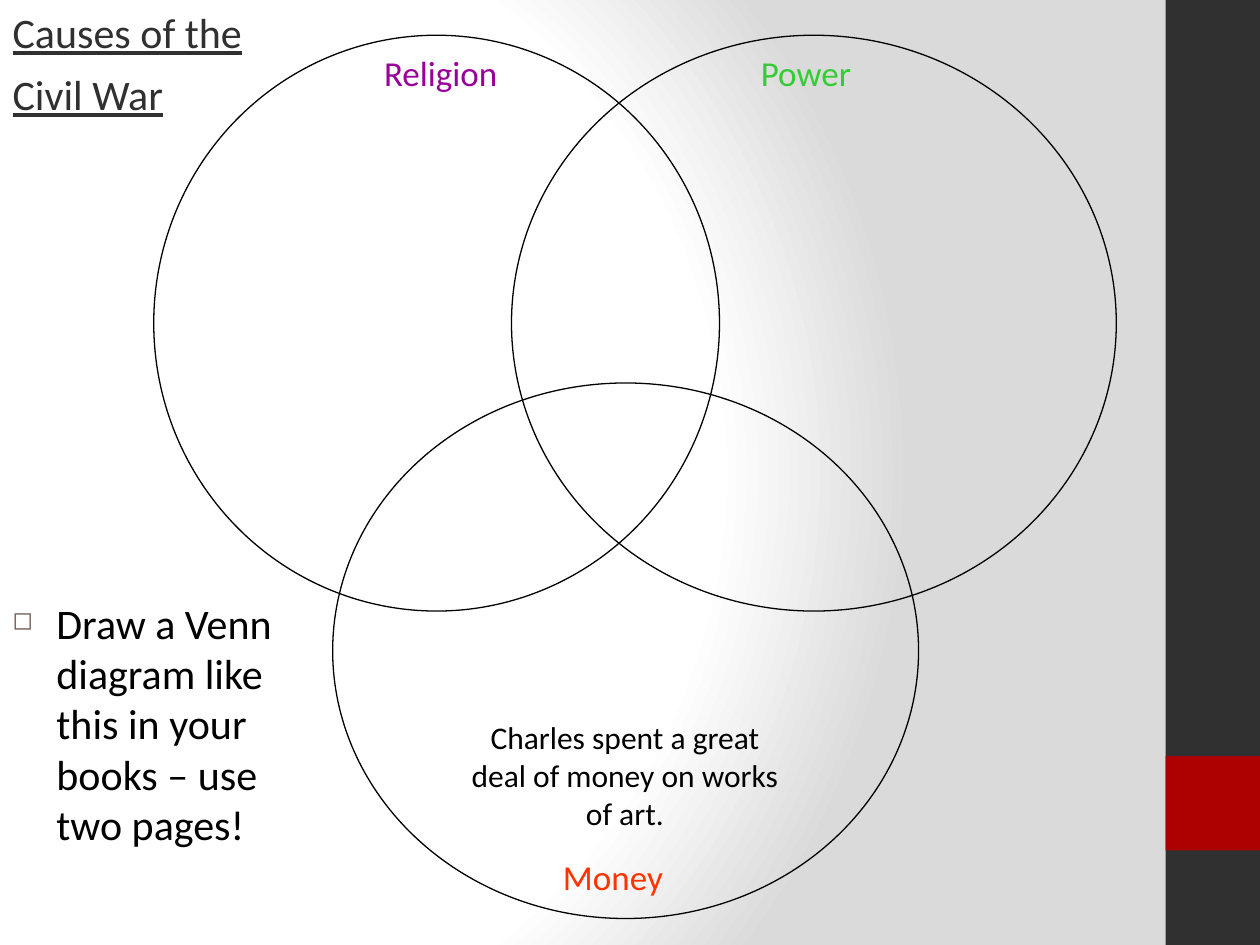
import pptx
import pptx.dml.color
import pptx.enum.shapes
import pptx.enum.text
import pptx.oxml.ns
import pptx.util
import lxml.etree

theme = {
    "font": "Calibri", "big": 24, "mid": 20, "small": 18,
    "ink": "000000", "dark": "303030", "red": "AD0101", "mark": "726056",
    "faith": "990099", "power": "33CC33", "money": "FF3300",
    "stops": [(0, "FFFFFF"), (75, "FFFFFF"), (100, "DADADA")],
}
kinds = pptx.enum.shapes.MSO_SHAPE
aligns = pptx.enum.text.PP_ALIGN
color = pptx.dml.color.RGBColor.from_string

deck = pptx.Presentation()
deck.slide_width = pptx.util.Inches(10)
deck.slide_height = pptx.util.Inches(7.5)
col, row = deck.slide_width / 100, deck.slide_height / 100
slide = deck.slides.add_slide(deck.slide_layouts[5])
shapes = slide.shapes


def add(node, tag, **attrs):
    """Append a drawing element with the given attributes."""
    name = pptx.oxml.ns.qn("a:" + tag)
    return lxml.etree.SubElement(node, name, {k: str(v) for k, v in attrs.items()})


def write(text, at, size, ink, box=None, hang=True, line=False, mark=None):
    """Put text in a box placed by percent of the slide."""
    box = box or shapes.add_textbox(0, 0, 0, 0)
    x, y, w, h = at
    box.left, box.top = round(x * col), round(y * row)
    box.width, box.height = round(w * col), round(h * row)
    frame = box.text_frame
    frame.word_wrap = True
    frame.auto_size = pptx.enum.text.MSO_AUTO_SIZE.NONE
    frame.vertical_anchor = pptx.enum.text.MSO_ANCHOR.TOP
    frame.text = text
    for para in frame.paragraphs:
        para.alignment = aligns.LEFT if hang else aligns.CENTER
        font = para.runs[0].font
        font.name, font.size = theme["font"], pptx.util.Pt(size)
        font.color.rgb = color(ink)
        font.underline = line
        if hang:
            para.space_before = pptx.util.Pt(7)
            props = para._p.get_or_add_pPr()
            indent = pptx.util.Inches(0.35)
            props.set("marL", str(indent))
            props.set("indent", str(-indent))
            if mark:
                add(add(props, "buClr"), "srgbClr", val=theme["mark"])
                add(props, "buSzPct", val=60000)
                add(props, "buChar", char=mark)


# Background: a glow from the left side
slide.background.fill.gradient()
grad = slide._element.find(".//" + pptx.oxml.ns.qn("a:gradFill"))
for child in list(grad):
    grad.remove(child)
stops = add(grad, "gsLst")
for pos, tone in theme["stops"]:
    add(add(stops, "gs", pos=pos * 1000), "srgbClr", val=tone)
glow = add(grad, "path", path="circle")
add(glow, "fillToRect", l=20000, t=50000, r=100000, b=50000)

# Side band with its red block, then the three rings
for kind, fill, x, y, w, h in [
    (kinds.RECTANGLE, theme["dark"], 92.5, 0, 7.5, 100),
    (kinds.RECTANGLE, theme["red"], 92.5, 80, 7.5, 10),
    (kinds.OVAL, None, 12.2, 3.73, 44.9, 60.93),
    (kinds.OVAL, None, 40.6, 3.73, 48, 60.93),
    (kinds.OVAL, None, 26.4, 40.53, 46.5, 56.67),
]:
    shape = shapes.add_shape(kind, round(x * col), round(y * row),
                             round(w * col), round(h * row))
    shape.shadow.inherit = False
    if fill:
        shape.fill.solid()
        shape.fill.fore_color.rgb = color(fill)
        shape.line.fill.background()
    else:
        shape.fill.background()
        shape.line.color.rgb = color(theme["ink"])
        shape.line.width = pptx.util.Pt(0.75)

# Words
write("Causes of the\nCivil War", (0, 0, 26.4, 26.27), theme["big"],
      theme["dark"], box=shapes.title, line=True)
write("Draw a Venn diagram like this in your books – use two pages!",
      (0, 62.53, 26.4, 26.27), theme["big"], theme["ink"], mark="◻")
for text, x, y, ink in [
    ("Religion", 29.5, 4.8, "faith"),
    ("Power", 59.4, 4.8, "power"),
    ("Money", 43.7, 89.87, "money"),
]:
    write(text, (x, y, 11, 7.33), theme["mid"], theme[ink])
write("Charles spent a great deal of money on works of art.",
      (35.8, 75.33, 27.6, 13.47), theme["small"], theme["ink"], hang=False)

deck.save("out.pptx")
